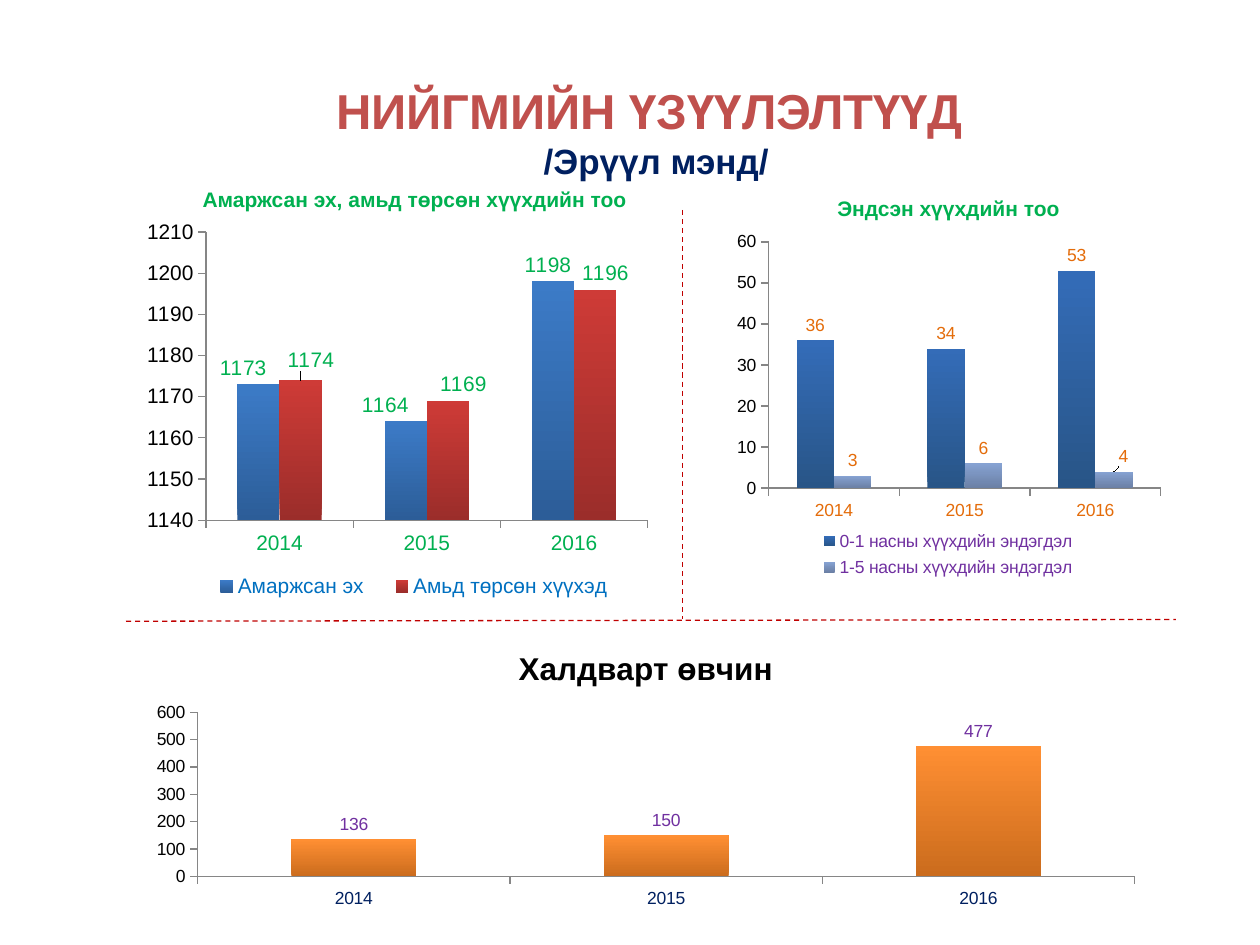
from pptx import Presentation, oxml
from pptx.chart.data import CategoryChartData
from pptx.dml.color import RGBColor
from pptx.enum import chart as ch, dml, shapes, text
from pptx.oxml import ns
from pptx.util import Pt

FONT = "Arial"
YEARS = ["2014", "2015", "2016"]
COLORS = {
    "red": "C0504D", "navy": "002060", "green": "00B050", "rule": "C00000",
    "blue": "0070C0", "orange": "E46C0A", "purple": "7030A0",
    "black": "000000", "axis": "868686",
}
GRADIENTS = {
    "blue": ("2C5D98", "3C7BC7"), "red": ("9B2D2A", "CE3B37"),
    "deep": ("285587", "346CB8"), "pale": ("6B80A5", "86A2D2"),
    "orange": ("CB6C1D", "FF8F33"),
}


def rgb(name):
    return RGBColor.from_string(COLORS[name])


def style(font, size, color, bold=False):
    font.name = FONT
    font.size = Pt(size)
    font.bold = bold
    font.color.rgb = rgb(color)


def add_run(p, content, size, color):
    r = p.add_run()
    r.text = content
    style(r.font, size, color, True)


def add_title(s):
    sp = s.shapes.title
    sp.left, sp.top, sp.width, sp.height = Pt(108), Pt(48), Pt(534), Pt(54)
    tf = sp.text_frame
    tf.word_wrap = True
    tf.auto_size = text.MSO_AUTO_SIZE.NONE
    tf.vertical_anchor = text.MSO_ANCHOR.MIDDLE
    p = tf.paragraphs[0]
    p.alignment = text.PP_ALIGN.CENTER
    add_run(p, "НИЙГМИЙН ҮЗҮҮЛЭЛТҮҮД ", 28, "red")
    p.add_line_break()
    add_run(p, "/Эрүүл мэнд/", 20, "navy")


def add_heading(s, content, left, top, width, height):
    sp = s.shapes.add_textbox(Pt(left), Pt(top), Pt(width), Pt(height))
    tf = sp.text_frame
    tf.word_wrap = True
    p = tf.paragraphs[0]
    p.alignment = text.PP_ALIGN.CENTER
    add_run(p, content, 12, "green")


def add_divider(s, x1, y1, x2, y2):
    sp = s.shapes.add_connector(
        shapes.MSO_CONNECTOR.STRAIGHT, Pt(x1), Pt(y1), Pt(x2), Pt(y2))
    sp.line.color.rgb = rgb("rule")
    sp.line.width = Pt(0.75)
    sp.line.dash_style = dml.MSO_LINE.DASH
    sp._element.spPr.append(oxml.parse_xml(f"<a:effectLst {ns.nsdecls('a')}/>"))


def set_layout(element, index, **values):
    for old in element.findall(ns.qn("c:layout")):
        element.remove(old)
    items = "".join(f'<c:{k} val="{v}"/>' for k, v in values.items())
    element.insert(index, oxml.parse_xml(
        f"<c:layout {ns.nsdecls('c')}><c:manualLayout>{items}"
        "</c:manualLayout></c:layout>"))


def set_frame(element, index, frame, **target):
    set_layout(element, index, **target, xMode="edge", yMode="edge",
               **dict(zip("xywh", frame)))


def style_axis(axis, size, color):
    axis.has_major_gridlines = False
    axis.major_tick_mark = ch.XL_TICK_MARK.OUTSIDE
    axis.minor_tick_mark = ch.XL_TICK_MARK.NONE
    axis.format.line.color.rgb = rgb("axis")
    axis.format.line.width = Pt(0.75)
    style(axis.tick_labels.font, size, color)


def style_series(series, gradient, size, color, offsets):
    series.invert_if_negative = False
    fill = series.format.fill
    fill.gradient()
    fill.gradient_angle = 90
    for stop, value in zip(fill.gradient_stops, GRADIENTS[gradient]):
        stop.color.rgb = RGBColor.from_string(value)
    labels = series.data_labels
    labels.show_value = True
    labels.position = ch.XL_LABEL_POSITION.OUTSIDE_END
    style(labels.font, size, color)
    for i, (x, y) in offsets.items():
        label = series.points[i].data_label
        label.position = ch.XL_LABEL_POSITION.OUTSIDE_END
        style(label.font, size, color)
        set_layout(label._get_or_add_dLbl(), 1, x=x, y=y)


def add_columns(s, box, plot, size, scale, series, label_color, cat_color):
    data = CategoryChartData()
    data.categories = YEARS
    for name, values, _, _ in series:
        data.add_series(name, values)
    chart = s.shapes.add_chart(
        ch.XL_CHART_TYPE.COLUMN_CLUSTERED, *map(Pt, box), data).chart
    chart.has_title = chart.has_legend = False
    style(chart.font, size, "black")
    style_axis(chart.category_axis, size, cat_color)
    axis = chart.value_axis
    style_axis(axis, size, "black")
    axis.minimum_scale, axis.maximum_scale, axis.major_unit = scale
    bars = chart.plots[0]
    bars.gap_width = 150
    bars.overlap = 0
    bars.vary_by_categories = False
    for item, (_, _, gradient, offsets) in zip(bars.series, series):
        style_series(item, gradient, size, label_color, offsets)
    area = chart._chartSpace.xpath("c:chart/c:plotArea")[0]
    set_frame(area, 0, plot, layoutTarget="inner")
    return chart


def add_legend(chart, frame, size, color):
    chart.has_legend = True
    legend = chart.legend
    legend.position = ch.XL_LEGEND_POSITION.RIGHT
    legend.include_in_layout = False
    style(legend.font, size, color)
    set_frame(legend._element, 1, frame)


def main():
    prs = Presentation()
    prs.slide_width, prs.slide_height = Pt(720), Pt(540)
    s = prs.slides.add_slide(prs.slide_layouts[5])
    add_divider(s, 390, 120, 390, 354)
    add_divider(s, 72, 355, 672, 354)
    add_title(s)
    add_heading(s, "Амаржсан эх, амьд төрсөн хүүхдийн тоо", 108, 103, 258, 24)
    add_heading(s, "Эндсэн хүүхдийн тоо", 432, 108, 220, 36)

    births = add_columns(
        s, (84, 126, 295, 222.5), (0.11, 0.03, 0.86, 0.74), 12,
        (1140, 1210, 10), [
            ("Амаржсан эх", (1173, 1164, 1198), "blue",
             {0: (-0.03, 0), 1: (-0.04, 0), 2: (-0.01, 0)}),
            ("Амьд төрсөн хүүхэд", (1174, 1169, 1196), "red",
             {0: (0.02, -0.01), 1: (0.03, 0), 2: (0.02, 0)}),
        ], "green", "green")
    add_legend(births, (0.09, 0.89, 0.85, 0.1), 12, "blue")

    deaths = add_columns(
        s, (396, 132, 270, 210), (0.16, 0.03, 0.83, 0.67), 10,
        (0, 60, 10), [
            ("0-1 насны хүүхдийн эндэгдэл", (36, 34, 53), "deep", {}),
            ("1-5 насны хүүхдийн эндэгдэл", (3, 6, 4), "pale",
             {2: (0.02, 0)}),
        ], "orange", "orange")
    add_legend(deaths, (0.23, 0.8, 0.62, 0.16), 10, "purple")

    disease = "Халдварт өвчин"
    infections = add_columns(
        s, (78, 360, 582, 162), (0.06, 0.29, 0.92, 0.58), 10,
        (0, 600, 100), [(disease, (136, 150, 477), "orange", {})],
        "purple", "navy")
    infections.has_title = True
    p = infections.chart_title.text_frame.paragraphs[0]
    add_run(p, disease, 18, "black")
    infections.chart_title.include_in_layout = False
    prs.save("out.pptx")


if __name__ == "__main__":
    main()
